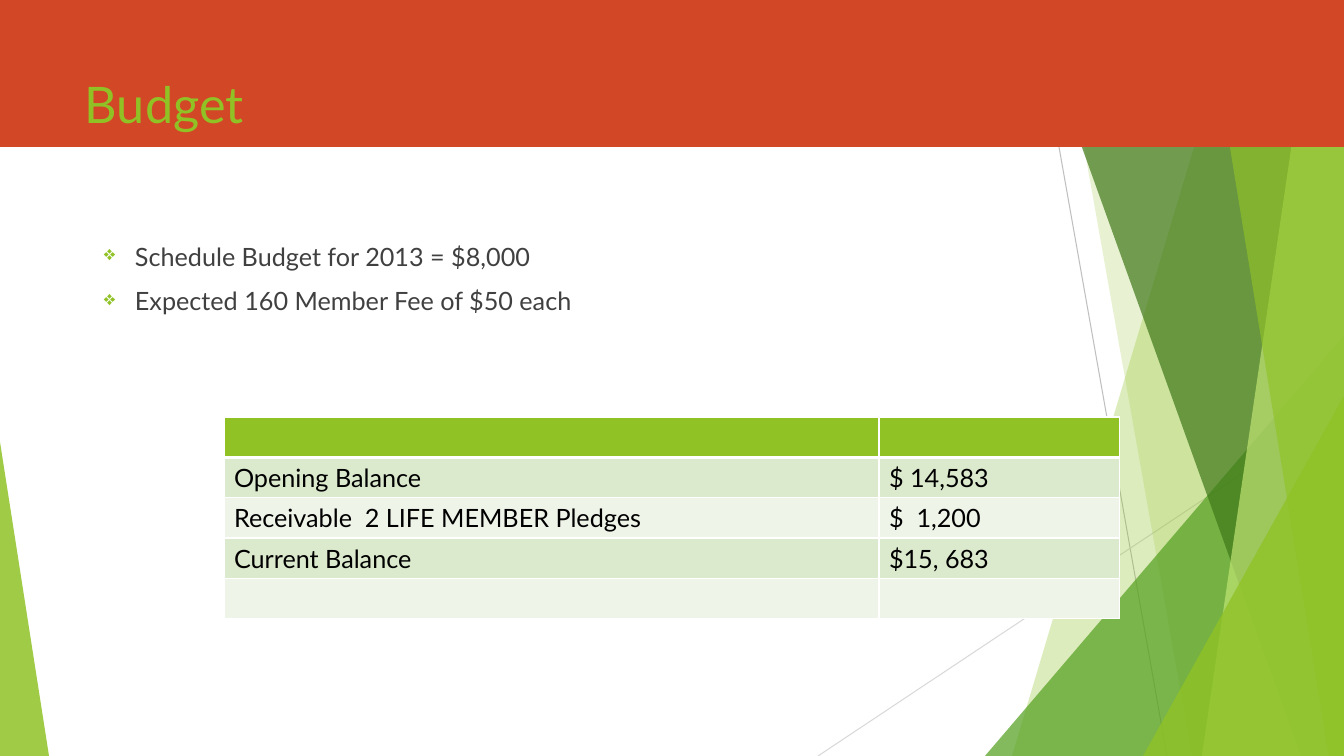
from dataclasses import dataclass

from lxml import etree
from pptx import Presentation
from pptx.dml.color import RGBColor
from pptx.enum.shapes import MSO_CONNECTOR, MSO_SHAPE
from pptx.enum.text import MSO_ANCHOR
from pptx.oxml.ns import qn
from pptx.util import Emu, Pt

STRAIGHT = MSO_CONNECTOR.STRAIGHT
RECTANGLE = MSO_SHAPE.RECTANGLE
TRIANGLE = MSO_SHAPE.ISOSCELES_TRIANGLE
TOP = MSO_ANCHOR.TOP
MIDDLE = MSO_ANCHOR.MIDDLE

EMU_PER_PX = 914400 / 100.8
WIDTH, HEIGHT = 1344, 756


@dataclass(frozen=True)
class Theme:
    font: str = "Lato"
    title_size: int = 36
    text_size: int = 18
    banner: str = "D24726"
    accent: str = "90C226"
    leaf: str = "54A021"
    forest: str = "3F7819"
    lime: str = "C0E474"
    body: str = "404040"
    table_text: str = "000000"
    border: str = "FFFFFF"
    bands: tuple[str, str] = ("DBE9CD", "EEF4E8")
    ray_dark: str = "BFBFBF"
    ray_light: str = "D9D9D9"


THEME = Theme()


@dataclass(frozen=True)
class Ray:
    start: tuple[int, int]
    end: tuple[int, int]
    color: str


@dataclass(frozen=True)
class Facet:
    points: tuple[tuple[int, int], ...]
    color: str
    opacity: int


@dataclass(frozen=True)
class Wedge:
    left: int
    top: int
    width: int
    apex: float
    color: str
    opacity: int


def right_facet(top_x: int, bottom_x: int, color: str, opacity: int) -> Facet:
    points = ((top_x, 0), (WIDTH, 0), (WIDTH, HEIGHT), (bottom_x, HEIGHT))
    return Facet(points, color, opacity)


RAYS = (
    Ray((1033, 0), (1167, HEIGHT), THEME.ray_dark),
    Ray((WIDTH, 406), (818, HEIGHT), THEME.ray_light),
)
DECORATION = (
    right_facet(1238, 1012, THEME.accent, 30),
    right_facet(1058, 1192, THEME.accent, 20),
    Wedge(985, 336, 359, 1, THEME.leaf, 72),
    right_facet(1029, 1301, THEME.forest, 70),
    right_facet(1313, 1202, THEME.lime, 70),
    right_facet(1206, 1329, THEME.accent, 65),
    Wedge(1143, 396, 201, 1, THEME.accent, 80),
    Wedge(0, 442, 49, 0, THEME.accent, 85),
)
GOALS = ("Schedule Budget for 2013 = $8,000", "Expected 160 Member Fee of $50 each")
BALANCES = (
    ("", ""),
    ("Opening Balance", "$ 14,583"),
    ("Receivable  2 LIFE MEMBER Pledges", "$  1,200"),
    ("Current Balance", "$15, 683"),
    ("", ""),
)
COLUMN_WIDTHS = (655, 241)
ROW_HEIGHT = 40


def px(length: int) -> Emu:
    return Emu(round(length * EMU_PER_PX))


def rgb(color: str) -> RGBColor:
    return RGBColor.from_string(color)


def paint(shape, color: str, opacity: int = 100) -> None:
    shape.shadow.inherit = False
    shape.line.fill.background()
    shape.fill.solid()
    shape.fill.fore_color.rgb = rgb(color)
    if opacity < 100:
        tint = shape.fill._xPr.find(qn("a:solidFill"))[0]
        etree.SubElement(tint, qn("a:alpha"), val=str(opacity * 1000))


def draw_ray(slide, ray: Ray) -> None:
    line = slide.shapes.add_connector(STRAIGHT, *map(px, ray.start + ray.end))
    line.line.color.rgb = rgb(ray.color)
    line.line.width = Pt(0.75)
    etree.SubElement(line._element.spPr, qn("a:effectLst"))


def draw_facet(slide, facet: Facet) -> None:
    builder = slide.shapes.build_freeform(*facet.points[0], scale=EMU_PER_PX)
    builder.add_line_segments(facet.points[1:], close=True)
    paint(builder.convert_to_shape(), facet.color, facet.opacity)


def draw_wedge(slide, wedge: Wedge) -> None:
    box = (wedge.left, wedge.top, wedge.width, HEIGHT - wedge.top)
    triangle = slide.shapes.add_shape(TRIANGLE, *map(px, box))
    triangle.adjustments[0] = wedge.apex
    paint(triangle, wedge.color, wedge.opacity)


def write(paragraph, text: str, *, size: int, color: str) -> None:
    run = paragraph.add_run()
    run.text = text
    run.font.name = THEME.font
    run.font.size = Pt(size)
    run.font.color.rgb = rgb(color)


def add_text_frame(slide, left: int, top: int, width: int, height: int):
    frame = slide.shapes.add_textbox(*map(px, (left, top, width, height))).text_frame
    frame.word_wrap = True
    frame.vertical_anchor = TOP
    frame.margin_left = frame.margin_right = frame.margin_top = frame.margin_bottom = 0
    return frame


def add_bullet(paragraph, indent: int) -> None:
    properties = paragraph._p.get_or_add_pPr()
    properties.set("marL", str(px(indent)))
    properties.set("indent", str(-px(indent)))
    color = etree.SubElement(properties, qn("a:buClr"))
    etree.SubElement(color, qn("a:srgbClr"), val=THEME.accent)
    etree.SubElement(properties, qn("a:buSzPct"), val="80000")
    etree.SubElement(properties, qn("a:buChar"), char="❖")


def draw_goals(slide) -> None:
    frame = add_text_frame(slide, 104, 241, 1110, 90)
    for index, goal in enumerate(GOALS):
        paragraph = frame.paragraphs[0] if index == 0 else frame.add_paragraph()
        paragraph.space_after = Pt(10)
        add_bullet(paragraph, 31)
        write(paragraph, goal, size=THEME.text_size, color=THEME.body)


def set_border(cell, side: str, points: int) -> None:
    properties = cell._tc.get_or_add_tcPr()
    line = etree.SubElement(properties, qn(f"a:ln{side}"), w=str(Pt(points)))
    fill = etree.SubElement(line, qn("a:solidFill"))
    etree.SubElement(fill, qn("a:srgbClr"), val=THEME.border)


def draw_balances(slide) -> None:
    box = (224, 417, sum(COLUMN_WIDTHS), ROW_HEIGHT * len(BALANCES))
    table = slide.shapes.add_table(len(BALANCES), len(COLUMN_WIDTHS), *map(px, box)).table
    table.horz_banding = False
    for column, width in zip(table.columns, COLUMN_WIDTHS):
        column.width = px(width)
    for row, texts in enumerate(BALANCES):
        for column, text in enumerate(texts):
            cell = table.cell(row, column)
            cell.vertical_anchor = TOP
            for side in "LRTB":
                heavy = (row, side) in ((0, "B"), (1, "T"))
                set_border(cell, side, 3 if heavy else 1)
            cell.fill.solid()
            cell.fill.fore_color.rgb = rgb(THEME.bands[(row - 1) % 2] if row else THEME.accent)
            paragraph = cell.text_frame.paragraphs[0]
            paragraph.font.size = Pt(THEME.text_size)
            if text:
                write(paragraph, text, size=THEME.text_size, color=THEME.table_text)


def main() -> None:
    deck = Presentation()
    deck.slide_width, deck.slide_height = px(WIDTH), px(HEIGHT)
    slide = deck.slides.add_slide(deck.slide_layouts[6])
    for ray in RAYS:
        draw_ray(slide, ray)
    for part in DECORATION:
        if isinstance(part, Facet):
            draw_facet(slide, part)
        else:
            draw_wedge(slide, part)
    banner = slide.shapes.add_shape(RECTANGLE, 0, 0, px(WIDTH), px(147))
    paint(banner, THEME.banner)
    title = add_text_frame(slide, 85, 73, 928, 66)
    write(title.paragraphs[0], "Budget", size=THEME.title_size, color=THEME.accent)
    draw_goals(slide)
    draw_balances(slide)
    deck.save("out.pptx")


if __name__ == "__main__":
    main()
